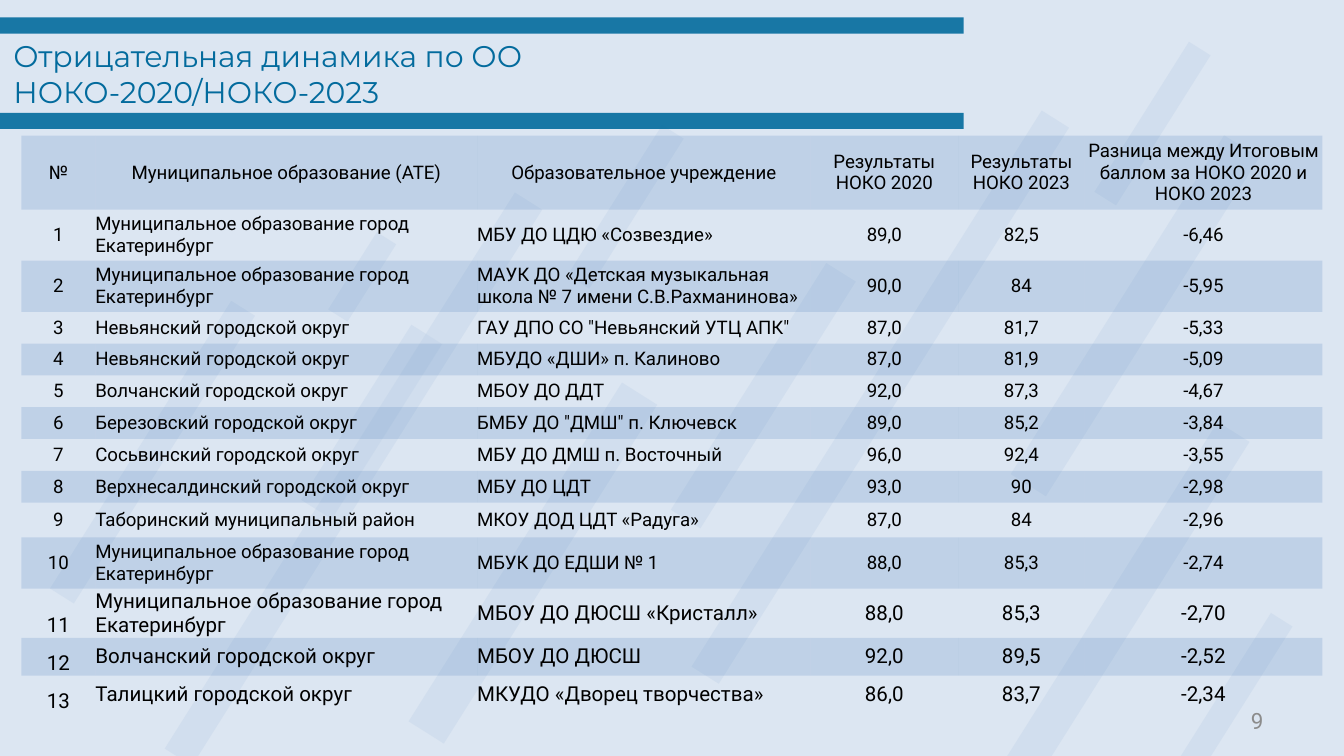
from lxml import etree
from pptx import Presentation
from pptx.dml.color import RGBColor
from pptx.enum import shapes, text
from pptx.oxml.ns import qn
from pptx.util import Inches, Pt

NO_STYLE_NO_GRID = "{2D5ABB26-0587-4C30-8999-92F81FD0307C}"
CITY = "Муниципальное образование город Екатеринбург"

# left, top, width, height of the slanted background stripes
STRIPES = [
    (8.09, 2.94, 0.28, 3.56), (2.51, 1.12, 0.24, 4.89), (3.81, 2.7, 0.31, 2.98),
    (4.56, 0.88, 0.19, 1.32), (1.03, 2.1, 0.21, 2.53), (2.63, 2.37, 0.27, 1.54),
    (2.61, 1.72, 0.17, 0.68), (6.43, 0.51, 0.24, 4.89), (8.29, 0.86, 0.31, 2.98),
    (8.48, 0.26, 0.19, 1.32), (5.55, 1.86, 0.26, 2.17), (9.09, 4.51, 0.19, 1.32),
]

HEADER = ("№", "Муниципальное образование (АТЕ)", "Образовательное учреждение",
          "Результаты НОКО 2020", "Результаты НОКО 2023",
          "Разница между Итоговым баллом за НОКО 2020 и НОКО 2023")
RESULTS = [
    (CITY, "МБУ ДО ЦДЮ «Созвездие»", "89,0", "82,5", "-6,46"),
    (CITY, "МАУК ДО «Детская музыкальная школа № 7 имени С.В.Рахманинова»",
     "90,0", "84", "-5,95"),
    ("Невьянский городской округ", 'ГАУ ДПО СО "Невьянский УТЦ АПК"', "87,0", "81,7", "-5,33"),
    ("Невьянский городской округ", "МБУДО «ДШИ» п. Калиново", "87,0", "81,9", "-5,09"),
    ("Волчанский городской округ", "МБОУ ДО ДДТ", "92,0", "87,3", "-4,67"),
    ("Березовский городской округ", 'БМБУ ДО "ДМШ" п. Ключевск', "89,0", "85,2", "-3,84"),
    ("Сосьвинский городской округ", "МБУ ДО ДМШ п. Восточный", "96,0", "92,4", "-3,55"),
    ("Верхнесалдинский городской округ", "МБУ ДО ЦДТ", "93,0", "90", "-2,98"),
    ("Таборинский муниципальный район", "МКОУ ДОД ЦДТ «Радуга»", "87,0", "84", "-2,96"),
    (CITY, "МБУК ДО ЕДШИ № 1", "88,0", "85,3", "-2,74"),
    (CITY, "МБОУ ДО ДЮСШ «Кристалл»", "88,0", "85,3", "-2,70"),
    ("Волчанский городской округ", "МБОУ ДО ДЮСШ", "92,0", "89,5", "-2,52"),
    ("Талицкий городской округ", "МКУДО «Дворец творчества»", "86,0", "83,7", "-2,34"),
]
COLUMN_WIDTHS = [0.55, 2.84, 2.48, 1.1, 0.94, 1.77]
ROW_HEIGHTS = [0.55, 0.38, 0.38] + [1.42 / 6] * 6 + [0.26, 0.38, 0.36, 0.28, 0.28]
FIRST_LARGE_ROW = 11


def rgb(color):
    return RGBColor.from_string(color)


def fill_solid(part, properties, color, opacity):
    """Fill a shape or cell, whose XML properties are given; opacity is in percent."""
    part.fill.solid()
    part.fill.fore_color.rgb = rgb(color)
    color_node = properties.find(qn("a:solidFill")).find(qn("a:srgbClr"))
    etree.SubElement(color_node, qn("a:alpha")).set("val", str(opacity * 1000))


class ReportSlide:
    accent, stripe, band = "036B9D", "B9CDE5", "4F81BD"
    ink, muted, paper = "000000", "8C8C8C", "DCE6F2"
    title_font, body_font = "Montserrat", "Roboto"

    def __init__(self, deck):
        self.slide = deck.slides.add_slide(deck.slide_layouts[5])
        self.slide.background.fill.solid()
        self.slide.background.fill.fore_color.rgb = rgb(self.paper)

    def style(self, paragraph, size, font, color, align):
        paragraph.alignment = align
        paragraph.font.size = Pt(size)
        paragraph.font.name = font
        paragraph.font.color.rgb = rgb(color)

    def bar(self, box, color, opacity, rotation=0):
        bar = self.slide.shapes.add_shape(
            shapes.MSO_SHAPE.RECTANGLE, *map(Inches, box))
        bar.shadow.inherit = False
        bar.line.fill.background()
        bar.rotation = rotation
        fill_solid(bar, bar.element.spPr, color, opacity)

    def title(self, wording, box):
        heading = self.slide.shapes.title
        heading.left, heading.top, heading.width, heading.height = map(Inches, box)
        frame = heading.text_frame
        frame.text = wording
        frame.word_wrap = True
        frame.auto_size = text.MSO_AUTO_SIZE.NONE
        frame.vertical_anchor = text.MSO_ANCHOR.TOP
        for line in frame.paragraphs:
            self.style(line, 16, self.title_font, self.accent, text.PP_ALIGN.LEFT)

    def page_number(self, number, box):
        frame = self.slide.shapes.add_textbox(*map(Inches, box)).text_frame
        frame.text = str(number)
        frame.word_wrap = True
        frame.vertical_anchor = text.MSO_ANCHOR.MIDDLE
        self.style(frame.paragraphs[0], 12, self.body_font, self.muted,
                   text.PP_ALIGN.RIGHT)

    def cell(self, cell, wording, size, align, anchor, banded):
        cell.text = wording
        cell.margin_left = cell.margin_right = cell.margin_top = cell.margin_bottom = 0
        cell.vertical_anchor = anchor
        self.style(cell.text_frame.paragraphs[0], size, self.body_font, self.ink, align)
        if banded:
            fill_solid(cell, cell._tc.tcPr, self.band, 20)
        else:
            cell.fill.background()

    def table(self, rows, left, top):
        table = self.slide.shapes.add_table(
            len(rows), len(COLUMN_WIDTHS), Inches(left), Inches(top),
            Inches(sum(COLUMN_WIDTHS)), Inches(sum(ROW_HEIGHTS))).table
        table._tbl.tblPr.find(qn("a:tableStyleId")).text = NO_STYLE_NO_GRID
        table.first_row = table.horz_banding = False
        for column, width in zip(table.columns, COLUMN_WIDTHS):
            column.width = Inches(width)
        for r, values in enumerate(rows):
            table.rows[r].height = Inches(ROW_HEIGHTS[r])
            large = r >= FIRST_LARGE_ROW
            for c, value in enumerate(values):
                named = r > 0 and c in (1, 2)
                self.cell(
                    table.cell(r, c), value, 11 if large else 10,
                    text.PP_ALIGN.LEFT if named else text.PP_ALIGN.CENTER,
                    text.MSO_ANCHOR.BOTTOM if large and c == 0 else text.MSO_ANCHOR.MIDDLE,
                    banded=r % 2 == 0)


def main():
    deck = Presentation()
    deck.slide_width = Inches(10)
    deck.slide_height = deck.slide_width * 9 // 16
    report = ReportSlide(deck)
    for box in STRIPES:
        report.bar(box, report.stripe, 30, rotation=32.2)
    report.title("Отрицательная динамика по ОО\nНОКО-2020/НОКО-2023", (0, 0.23, 10, 0.64))
    for top in (0.84, 0.13):
        report.bar((0, top, 7.17, 0.12), report.accent, 90)
    report.page_number(9, (7.17, 5.21, 2.33, 0.3))
    numbered = [(str(n), *result) for n, result in enumerate(RESULTS, 1)]
    report.table([HEADER] + numbered, 0.16, 1.01)
    deck.save("out.pptx")


if __name__ == "__main__":
    main()
